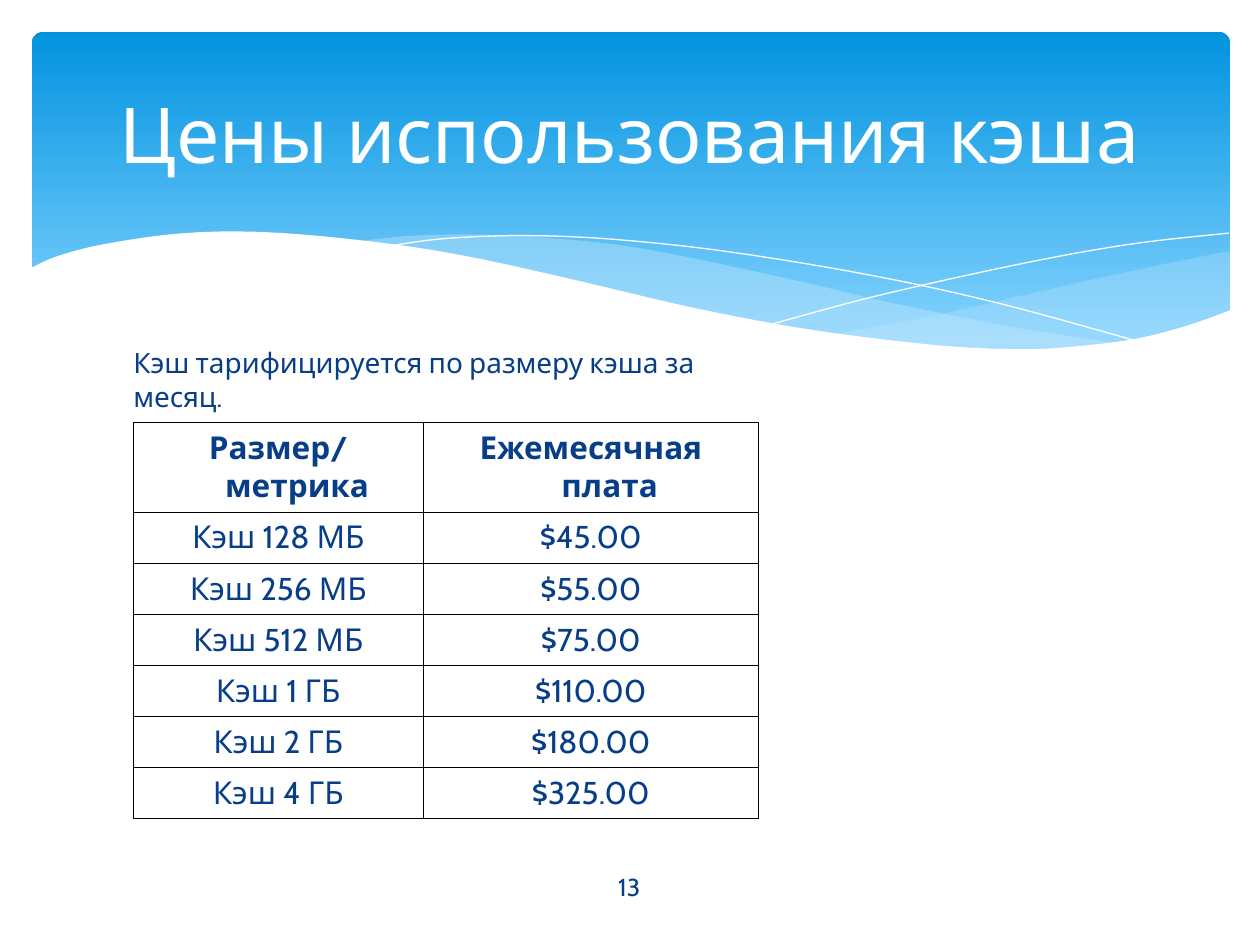
import pptx
import pptx.dml.color
import pptx.enum.shapes
import pptx.enum.text
import pptx.oxml
import pptx.oxml.ns
import pptx.util

Cm, Pt = pptx.util.Cm, pptx.util.Pt
MIDDLE = pptx.enum.text.MSO_ANCHOR.MIDDLE
BOTTOM = pptx.enum.text.MSO_ANCHOR.BOTTOM
CENTER = pptx.enum.text.PP_ALIGN.CENTER
LEFT = pptx.enum.text.PP_ALIGN.LEFT
RECT = pptx.enum.shapes.MSO_SHAPE.RECTANGLE
ROUNDED = pptx.enum.shapes.MSO_SHAPE.ROUNDED_RECTANGLE
NAVY, WHITE, PALE = "073E87", "FFFFFF", "C6E7FC"

RIGHT_TOP = [(24.16, 4.42), (22.76, 4.7), (21.23, 5.03), (19.15, 5.51), (17.88, 5.79), (16.15, 6.1)]
RIGHT_BOTTOM = [(16.15, 6.1), (17.6, 6.27), (19.2, 6.4), (20.57, 6.4), (21.95, 6.27),
                (23.11, 5.99), (24.16, 5.64)]
MIDDLE_TOP = [(6.63, 4.22), (7.7, 4.11), (9.02, 4.09), (10.59, 4.17), (12.42, 4.39),
              (15.34, 5), (17.3, 5.46), (19.86, 5.97), (22.05, 6.3)]
MIDDLE_BOTTOM = [(22.05, 6.3), (20.9, 6.4), (19.58, 6.43), (18.06, 6.35), (16.26, 6.12),
                 (13.74, 5.66), (10.77, 5), (9.09, 4.62), (7.57, 4.34), (6.63, 4.22)]
FALLING_LINE = [(7.21, 4.32), (8.33, 4.17), (9.93, 4.11), (11.79, 4.19), (14.15, 4.45),
                (17.02, 4.93), (19.56, 5.49), (22.4, 6.27)]
RISING_LINE = [(14.94, 5.89), (17.02, 5.33), (19.84, 4.7), (22.1, 4.29), (24.13, 4.06)]
FRONT_EDGE = [(24.18, 5.61), (23.24, 5.94), (22.2, 6.2), (20.96, 6.35), (19.91, 6.4),
              (18.26, 6.32), (15.8, 6.02), (13.46, 5.59), (10.72, 4.95), (8.64, 4.5),
              (6.78, 4.22), (4.72, 4.04), (3.07, 4.06), (1.52, 4.27), (0.53, 4.52), (-0.05, 4.78)]
FRONT_BASE = [(-0.05, 7.72), (24.18, 7.72)]

PRICES = [("Размер/метрика", "Ежемесячная плата"), ("Кэш 128 МБ", "$45.00"),
          ("Кэш 256 МБ", "$55.00"), ("Кэш 512 МБ", "$75.00"), ("Кэш 1 ГБ", "$110.00"),
          ("Кэш 2 ГБ", "$180.00"), ("Кэш 4 ГБ", "$325.00")]


def rgb(value):
    return pptx.dml.color.RGBColor.from_string(value)


def set_attrs(obj, values):
    for name, value in values.items():
        setattr(obj, name, value)


def paint(fill, color):
    fill.solid()
    fill.fore_color.rgb = rgb(color)


def write(tf, text, size, color=NAVY, bold=False, align=CENTER, **frame):
    set_attrs(tf, {"word_wrap": True, "vertical_anchor": MIDDLE, **frame})
    p = tf.paragraphs[0]
    p.alignment = align
    r = p.add_run()
    r.text = text
    set_attrs(r.font, {"name": "Cabin", "size": Pt(size), "bold": bold})
    r.font.color.rgb = rgb(color)
    return p


def smooth(points, steps=6):
    ends = [points[0]] + points + [points[-1]]
    curve = [points[0]]
    for a, b, c, d in zip(ends, ends[1:], ends[2:], ends[3:]):
        for i in range(1, steps + 1):
            t = i / steps
            curve.append(tuple(
                (2 * q + (r - p) * t + (2 * p - 5 * q + 4 * r - s) * t ** 2
                 + (3 * q - p - 3 * r + s) * t ** 3) / 2
                for p, q, r, s in zip(a, b, c, d)))
    return curve


def add_wave(slide, left, top, points, color, opacity=100, closed=True):
    pts = [(Cm(left + x), Cm(top + y)) for x, y in points]
    fb = slide.shapes.build_freeform(*pts[0])
    fb.add_line_segments(pts[1:], close=closed)
    sp = fb.convert_to_shape()
    sp.shadow.inherit = False
    if not closed:
        sp.fill.background()
        sp.line.color.rgb = rgb(color)
        sp.line.width = Pt(0)
        return
    paint(sp.fill, color)
    sp.line.fill.background()
    if opacity < 100:
        clr = sp._element.spPr.find(".//" + pptx.oxml.ns.qn("a:srgbClr"))
        alpha = pptx.oxml.parse_xml(
            f'<a:alpha {pptx.oxml.ns.nsdecls("a")} val="{opacity * 1000}"/>')
        clr.append(alpha)


def add_banner(slide, left, top, width, height):
    sp = slide.shapes.add_shape(ROUNDED, Cm(left), Cm(top), Cm(width), Cm(height))
    sp.adjustments[0] = 0.034
    sp.shadow.inherit = False
    sp.line.fill.background()
    sp.fill.gradient()
    sp.fill.gradient_angle = 270
    for stop, (position, color) in zip(sp.fill.gradient_stops, [(0, "0293E0"), (0.9, "83D3FE")]):
        stop.position = position
        stop.color.rgb = rgb(color)
    add_wave(slide, left, top, smooth(RIGHT_TOP) + smooth(RIGHT_BOTTOM), PALE, 29)
    add_wave(slide, left, top, smooth(MIDDLE_TOP) + smooth(MIDDLE_BOTTOM), PALE, 40)
    for line in (FALLING_LINE, RISING_LINE):
        add_wave(slide, left, top, smooth(line), WHITE, closed=False)
    add_wave(slide, left, top, smooth(FRONT_EDGE) + FRONT_BASE, WHITE)


def add_title(slide, left, top, width, height):
    sp = slide.shapes.title
    set_attrs(sp, {"left": Cm(left), "top": Cm(top), "width": Cm(width), "height": Cm(height)})
    write(sp.text_frame, "Цены использования кэша", 44, WHITE)
    slide.shapes._spTree.append(sp._element)


def add_note(slide, left, top, width, height):
    sp = slide.shapes.add_shape(RECT, Cm(left), Cm(top), Cm(width), Cm(height))
    sp.shadow.inherit = False
    paint(sp.fill, WHITE)
    sp.line.fill.background()
    write(sp.text_frame, "Кэш тарифицируется по размеру кэша за месяц.", 16, align=LEFT,
          vertical_anchor=BOTTOM, margin_left=0, margin_right=0, margin_top=0, margin_bottom=0)


def add_borders(cell):
    tcPr = cell._tc.get_or_add_tcPr()
    for i, side in enumerate(("lnL", "lnR", "lnT", "lnB")):
        tcPr.insert(i, pptx.oxml.parse_xml(
            f'<a:{side} {pptx.oxml.ns.nsdecls("a")} w="{Pt(0.75)}"><a:solidFill>'
            f'<a:srgbClr val="000000"/></a:solidFill></a:{side}>'))


def add_price_table(slide, left, top, col_widths, head_height, row_height):
    height = head_height + row_height * (len(PRICES) - 1)
    tbl = slide.shapes.add_table(len(PRICES), len(col_widths), Cm(left), Cm(top),
                                 Cm(sum(col_widths)), Cm(height)).table
    set_attrs(tbl, {"first_row": False, "horz_banding": False})
    for col, width in zip(tbl.columns, col_widths):
        col.width = Cm(width)
    for i, values in enumerate(PRICES):
        tbl.rows[i].height = Cm(row_height if i else head_height)
        for cell, text in zip(tbl.rows[i].cells, values):
            paint(cell.fill, WHITE)
            add_borders(cell)
            cell.vertical_anchor = MIDDLE
            p = write(cell.text_frame, text, 18, bold=i == 0)
            pPr = p._p.get_or_add_pPr()
            pPr.set("marL", str(Cm(0.76)))
            pPr.set("indent", str(-Cm(0.76)))


def add_page_number(slide, left, top, width, height):
    sp = slide.shapes.add_textbox(Cm(left), Cm(top), Cm(width), Cm(height))
    write(sp.text_frame, "13", 14)


def main():
    prs = pptx.Presentation()
    prs.slide_width, prs.slide_height = Cm(25.4), Cm(19.05)
    slide = prs.slides.add_slide(prs.slide_layouts[5])
    add_banner(slide, 0.64, 0.64, 24.16, 6.86)
    add_title(slide, 1.27, 0.94, 22.86, 3.48)
    add_note(slide, 2.69, 6.63, 12.37, 1.7)
    add_price_table(slide, 2.69, 8.52, (5.84, 6.76), 1.79, 1.02)
    add_page_number(slide, 11.07, 17.37, 3.23, 1.02)
    prs.save("out.pptx")


if __name__ == "__main__":
    main()
